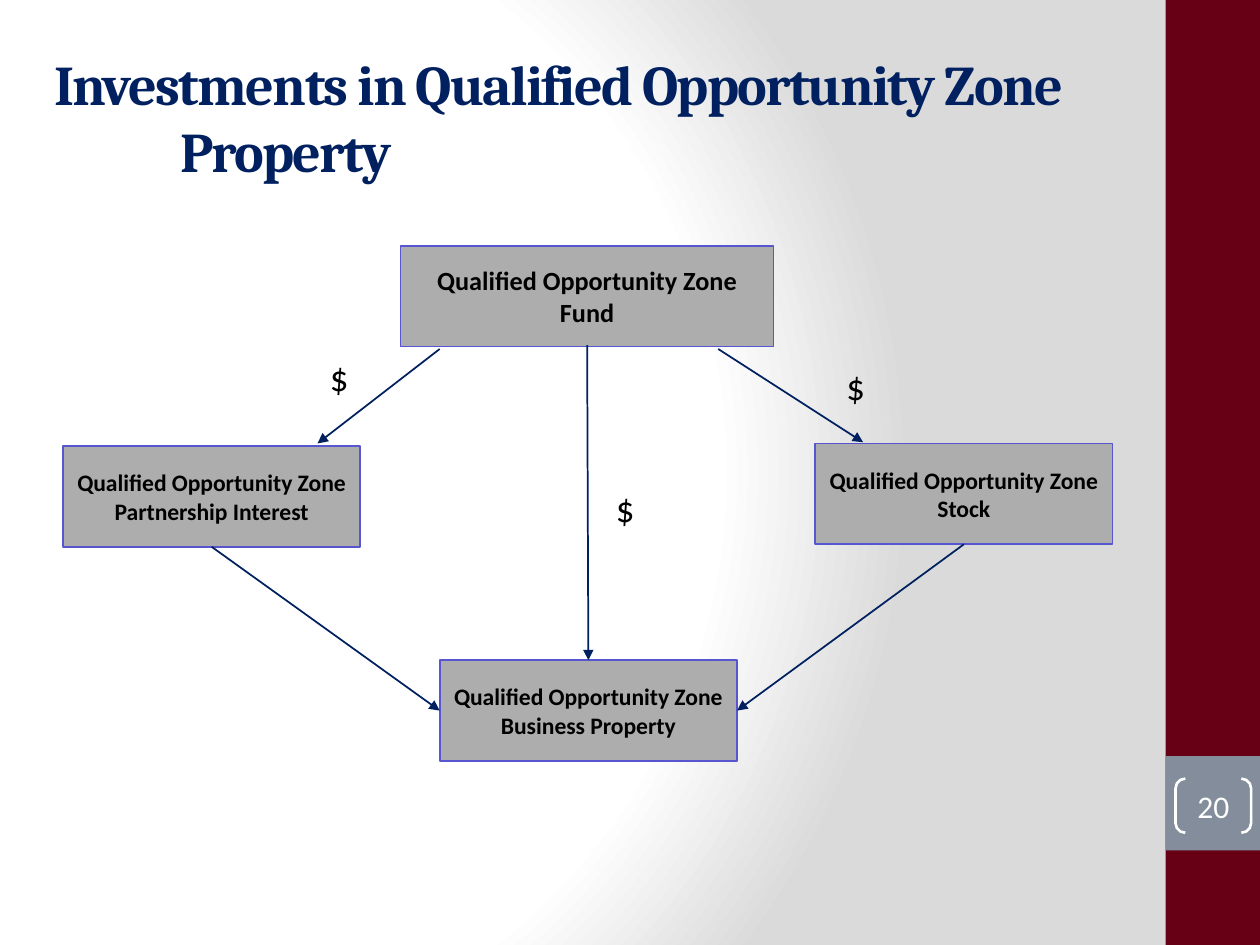
from pptx import Presentation
from pptx.dml.color import RGBColor
from pptx.enum.shapes import MSO_CONNECTOR, MSO_SHAPE
from pptx.enum.text import MSO_ANCHOR, MSO_AUTO_SIZE, PP_ALIGN
from pptx.oxml import parse_xml
from pptx.oxml.ns import nsdecls, qn
from pptx.util import Inches, Pt

NAVY, WHITE, BLACK = "002060", "FFFFFF", "000000"
GREY, VIOLET = "ADADAD", "5855D0"
WINE, SLATE = "680015", "838D9B"
STOPS = [(0, WHITE), (75, WHITE), (100, "DADADA")]

# Left, top, width, text size, words
BOXES = [
    (3.18, 1.95, 2.96, 15, "Qualified Opportunity Zone Fund"),
    (0.5, 3.54, 2.36, 13.5, "Qualified Opportunity Zone Partnership Interest"),
    (3.49, 5.24, 2.36, 13.5, "Qualified Opportunity Zone Business Property"),
    (6.47, 3.52, 2.36, 13.5, "Qualified Opportunity Zone Stock"),
]
# Start x, start y, end x, end y
ARROWS = [
    (4.66, 2.74, 4.67, 5.24),
    (3.49, 2.77, 2.52, 3.52),
    (5.7, 2.77, 6.85, 3.51),
    (1.68, 4.34, 3.49, 5.64),
    (7.65, 4.32, 5.85, 5.64),
]
DOLLARS = [(2.52, 2.77), (6.62, 2.84), (4.79, 3.81)]


def color(code):
    return RGBColor.from_string(code)


def write(shape, text, size=18, font="Calibri", ink=BLACK, bold=False,
          align=PP_ALIGN.LEFT, anchor=MSO_ANCHOR.MIDDLE, gap=0, inset=None):
    frame = shape.text_frame
    frame.word_wrap = True
    frame.auto_size = MSO_AUTO_SIZE.NONE
    frame.vertical_anchor = anchor
    if inset is not None:
        frame.margin_left = frame.margin_right = Inches(inset)
        frame.margin_top = frame.margin_bottom = Inches(inset)
    para = frame.paragraphs[0]
    para.alignment = align
    para.space_before = para.space_after = Pt(gap)
    run = para.add_run()
    run.text = text
    run.font.size, run.font.name, run.font.bold = Pt(size), font, bold
    run.font.color.rgb = color(ink)
    return para, run


def shade(slide):
    """Give the slide a round gradient background."""
    slide.background.fill.solid()
    stops = "".join(f'<a:gs pos="{at * 1000}"><a:srgbClr val="{code}"/></a:gs>'
                    for at, code in STOPS)
    grad = parse_xml(
        f'<a:gradFill {nsdecls("a")} rotWithShape="1"><a:gsLst>{stops}</a:gsLst>'
        '<a:path path="circle"><a:fillToRect l="20000" t="50000" '
        'r="100000" b="50000"/></a:path></a:gradFill>')
    back = slide.element.find(".//" + qn("p:bgPr"))
    back.replace(back[0], grad)


def add_form(slide, kind, left, top, width, height, fill=None, line=None, weight=1):
    form = slide.shapes.add_shape(kind, Inches(left), Inches(top),
                                  Inches(width), Inches(height))
    form.shadow.inherit = False
    if fill:
        form.fill.solid()
        form.fill.fore_color.rgb = color(fill)
    else:
        form.fill.background()
    if line:
        form.line.color.rgb = color(line)
        form.line.width = Pt(weight)
    else:
        form.line.fill.background()
    return form


def add_title(slide, text):
    title = slide.shapes.title
    title.left, title.top = Inches(0.33), Inches(0.3)
    title.width, title.height = Inches(8.5), Inches(1.25)
    para, run = write(title, text, size=32, font="Cambria", ink=NAVY, bold=True)
    # Hanging indent for the second line, and tighter letters
    props = para._p.get_or_add_pPr()
    props.set("marL", str(Inches(1)))
    props.set("indent", str(-Inches(1)))
    run.font._element.set("spc", "-100")


def add_arrow(slide, x1, y1, x2, y2):
    arrow = slide.shapes.add_connector(MSO_CONNECTOR.STRAIGHT, Inches(x1), Inches(y1),
                                       Inches(x2), Inches(y2))
    arrow.line.color.rgb = color(NAVY)
    arrow.line.width = Pt(1)
    arrow.line._get_or_add_ln().append(
        parse_xml(f'<a:tailEnd {nsdecls("a")} type="triangle"/>'))
    arrow._element.spPr.append(parse_xml(f'<a:effectLst {nsdecls("a")}/>'))


def add_side(slide):
    """Draw the right band with the page number."""
    add_form(slide, MSO_SHAPE.RECTANGLE, 9.25, 0, 0.75, 7.5, fill=WINE)
    add_form(slide, MSO_SHAPE.RECTANGLE, 9.25, 6, 0.75, 0.75, fill=SLATE)
    page = add_form(slide, MSO_SHAPE.DOUBLE_BRACKET, 9.33, 6.18, 0.6, 0.43,
                    line=WHITE, weight=1.5)
    page.adjustments[0] = 0.18
    write(page, "20", ink=WHITE, align=PP_ALIGN.CENTER, inset=0)


def main():
    deck = Presentation()
    deck.slide_width, deck.slide_height = Inches(10), Inches(7.5)
    slide = deck.slides.add_slide(deck.slide_layouts[5])
    shade(slide)
    add_side(slide)
    add_title(slide, "Investments in Qualified Opportunity Zone Property")

    # Flow of funds
    for left, top, width, size, text in BOXES:
        box = add_form(slide, MSO_SHAPE.RECTANGLE, left, top, width, 0.8,
                       fill=GREY, line=VIOLET)
        write(box, text, size=size, bold=True, align=PP_ALIGN.CENTER)
    for ends in ARROWS:
        add_arrow(slide, *ends)
    for left, top in DOLLARS:
        label = slide.shapes.add_textbox(Inches(left), Inches(top),
                                         Inches(0.46), Inches(0.48))
        write(label, "$", size=21, anchor=MSO_ANCHOR.TOP, gap=3)

    deck.save("out.pptx")


if __name__ == "__main__":
    main()
